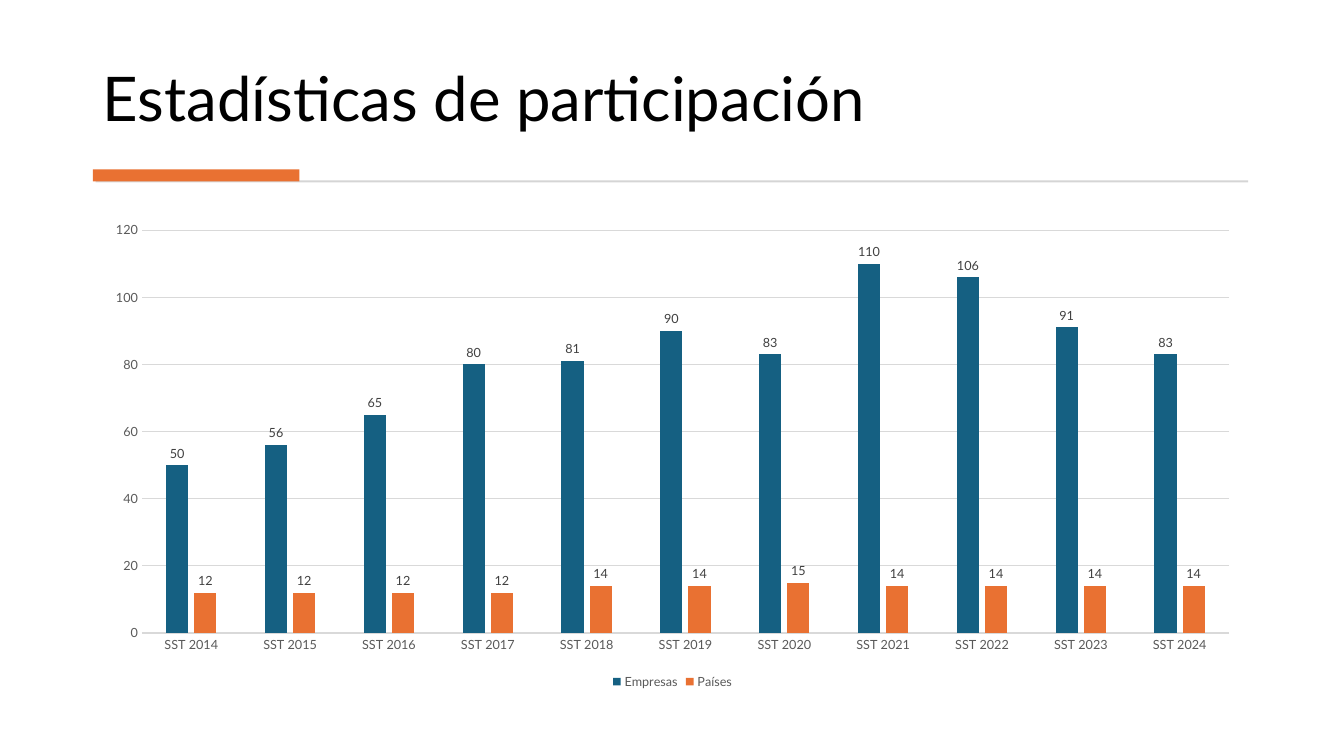
from dataclasses import dataclass

import pptx
import pptx.chart.data
import pptx.dml.color
import pptx.enum.chart
import pptx.enum.shapes
import pptx.enum.text
import pptx.util

Inches = pptx.util.Inches
Pt = pptx.util.Pt

FONT = "Lato"
COLORS = {
    "title": "000000",
    "rule": "D5D5D5",
    "accent": "E97132",
    "companies": "156082",
    "axis_text": "595959",
    "label_text": "404040",
    "grid": "D9D9D9",
}


@dataclass
class Bar:
    left: float
    top: float
    width: float
    height: float
    color: str


@dataclass
class Series:
    name: str
    values: tuple[int, ...]
    color: str


BARS = (
    Bar(0.95, 1.79, 11.43, 0.02, "rule"),
    Bar(0.92, 1.68, 2.05, 0.12, "accent"),
)
EDITIONS = [f"SST {year}" for year in range(2014, 2025)]
SERIES = (
    Series("Empresas", (50, 56, 65, 80, 81, 90, 83, 110, 106, 91, 83), "companies"),
    Series("Países", (12, 12, 12, 12, 14, 14, 15, 14, 14, 14, 14), "accent"),
)


def rgb(name: str) -> pptx.dml.color.RGBColor:
    return pptx.dml.color.RGBColor.from_string(COLORS[name])


def style_font(font, size: float, color: str) -> None:
    font.name = FONT
    font.size = Pt(size)
    font.color.rgb = rgb(color)


def style_line(line, color: str) -> None:
    line.color.rgb = rgb(color)
    line.width = Pt(0.75)


def add_title(slide, text: str) -> None:
    box = slide.shapes.add_textbox(Inches(0.92), Inches(0.28), Inches(11.49), Inches(1.11))
    frame = box.text_frame
    frame.word_wrap = True
    frame.vertical_anchor = pptx.enum.text.MSO_ANCHOR.BOTTOM
    paragraph = frame.paragraphs[0]
    paragraph.line_spacing = 0.9
    run = paragraph.add_run()
    run.text = text
    style_font(run.font, 44, "title")


def add_bar(slide, bar: Bar) -> None:
    shape = slide.shapes.add_shape(
        pptx.enum.shapes.MSO_SHAPE.RECTANGLE,
        Inches(bar.left), Inches(bar.top), Inches(bar.width), Inches(bar.height),
    )
    shape.shadow.inherit = False
    shape.fill.solid()
    shape.fill.fore_color.rgb = rgb(bar.color)
    shape.line.fill.background()


def add_participation_chart(slide) -> None:
    data = pptx.chart.data.CategoryChartData()
    data.categories = EDITIONS
    for series in SERIES:
        data.add_series(series.name, series.values)
    chart = slide.shapes.add_chart(
        pptx.enum.chart.XL_CHART_TYPE.COLUMN_CLUSTERED,
        Inches(0.92), Inches(2.11), Inches(11.5), Inches(4.77), data,
    ).chart
    chart.has_title = False
    style_font(chart.font, 10, "title")

    # Legend
    chart.has_legend = True
    chart.legend.position = pptx.enum.chart.XL_LEGEND_POSITION.BOTTOM
    chart.legend.include_in_layout = False
    style_font(chart.legend.font, 9, "axis_text")

    # Axes and gridlines
    for axis in (chart.category_axis, chart.value_axis):
        axis.major_tick_mark = pptx.enum.chart.XL_TICK_MARK.NONE
        axis.minor_tick_mark = pptx.enum.chart.XL_TICK_MARK.NONE
        style_font(axis.tick_labels.font, 9, "axis_text")
    style_line(chart.category_axis.format.line, "grid")
    chart.value_axis.format.line.fill.background()
    chart.value_axis.minimum_scale = 0
    chart.value_axis.maximum_scale = 120
    chart.value_axis.major_unit = 20
    style_line(chart.value_axis.major_gridlines.format.line, "grid")

    # Columns and value labels
    plot = chart.plots[0]
    plot.vary_by_categories = False
    plot.gap_width = 219
    plot.overlap = -27
    for column, series in zip(plot.series, SERIES):
        column.format.fill.solid()
        column.format.fill.fore_color.rgb = rgb(series.color)
        labels = column.data_labels
        labels.show_value = True
        labels.position = pptx.enum.chart.XL_LABEL_POSITION.OUTSIDE_END
        style_font(labels.font, 9, "label_text")


def main() -> None:
    presentation = pptx.Presentation()
    presentation.slide_width = Inches(13.33)
    presentation.slide_height = Inches(7.5)
    slide = presentation.slides.add_slide(presentation.slide_layouts[6])

    add_title(slide, "Estadísticas de participación")
    for bar in BARS:
        add_bar(slide, bar)
    add_participation_chart(slide)

    presentation.save("out.pptx")


if __name__ == "__main__":
    main()
